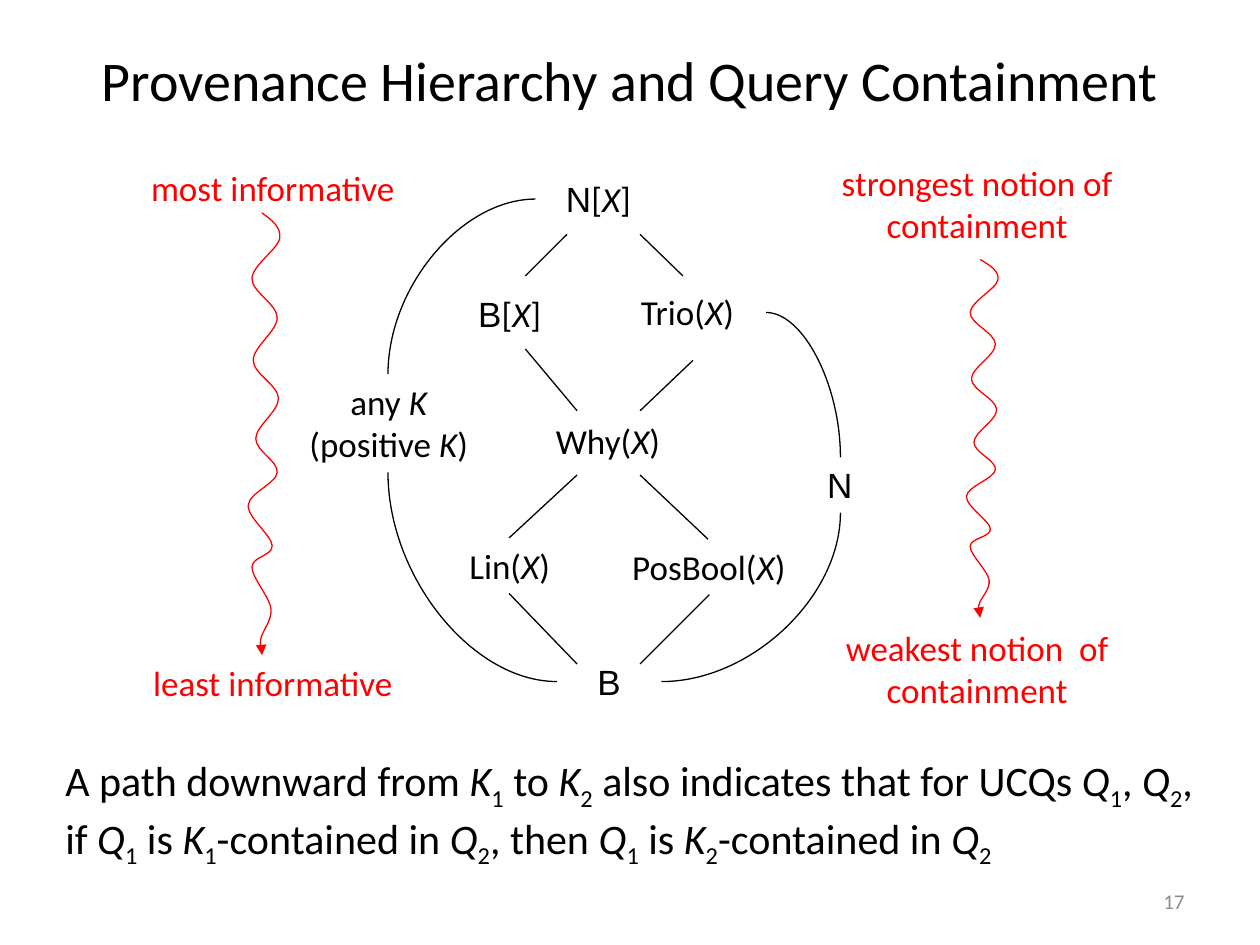
"""Build a slide on the provenance hierarchy and query containment."""
from dataclasses import dataclass

from lxml.etree import SubElement
from pptx import Presentation
from pptx.dml.color import RGBColor
from pptx.enum.shapes import MSO_CONNECTOR as Connector
from pptx.enum.text import MSO_ANCHOR as Anchor, MSO_AUTO_SIZE as AutoSize, PP_ALIGN as Align
from pptx.oxml.ns import qn
from pptx.util import Inches, Pt

COLORS = {"text": "000000", "accent": "FF0000", "number": "8C8C8C"}
FONT, SYMBOL_FONT = "Calibri", "Arial"
ITALIC, SUBSCRIPT, SYMBOL = "/", "_", "~"

Point = tuple[float, float]


@dataclass
class Label:
    """Text box whose runs are split by | and styled by their first character."""
    left: float
    top: float
    width: float
    height: float
    lines: tuple[str, ...]
    color: str = "text"
    size: int = 20
    align: Align = Align.CENTER
    anchor: Anchor = Anchor.TOP


@dataclass
class Link:
    """Straight edge, or quarter arc leaving its start horizontally."""
    start: Point
    end: Point
    curved: bool = False


@dataclass
class Wave:
    """Wavy downward arrow."""
    left: float
    top: float
    stretch: float


LABELS = [
    Label(4.25, 1.36, 1, 0.44, ("~N|[|/X|]",)),
    Label(3.17, 2.27, 1.75, 0.44, ("~B|[|/X|]",)),
    Label(4.83, 2.26, 1.25, 0.44, ("Trio(|/X|)",)),
    Label(3.95, 3.28, 1.75, 0.44, ("Why(|/X|)",)),
    Label(3.17, 4.27, 1.75, 0.44, ("Lin(|/X|)",)),
    Label(4.75, 4.28, 1.75, 0.44, ("PosBool(|/X|)",)),
    Label(4.42, 5.19, 0.83, 0.44, ("~B",)),
    Label(6.25, 3.63, 0.83, 0.44, ("~N",)),
    Label(2.17, 2.97, 1.83, 0.77, ("any |/K", "(positive |/K|)")),
    Label(0.58, 1.27, 3.17, 0.44, ("most informative",), "accent"),
    Label(0.58, 5.2, 3.17, 0.44, ("least informative",), "accent"),
    Label(6.17, 1.23, 3.17, 0.77, ("strongest notion of containment",), "accent"),
    Label(6.17, 4.92, 3.17, 0.77, ("weakest notion  of containment",), "accent"),
    Label(0.42, 5.94, 9.33, 0.91, (
        "A path downward from |/K|_1| to |/K|_2| also indicates that for UCQs "
        "|/Q|_1|, |/Q|_2|, if |/Q|_1| is |/K|_1|-contained in |/Q|_2"
        "|, then |/Q|_1| is |/K|_2|-contained in |/Q|_2",), size=24, align=Align.LEFT),
    Label(7.17, 6.95, 2.33, 0.4, ("17",), "number", 12, Align.RIGHT, Anchor.MIDDLE),
]
LINKS = [
    Link((4.5, 1.86), (4.17, 2.19)),
    Link((5.08, 1.86), (5.42, 2.19)),
    Link((4.17, 2.77), (4.58, 3.26)),
    Link((5.5, 2.86), (5.08, 3.26)),
    Link((4.58, 3.77), (4.04, 4.27)),
    Link((5.08, 3.77), (5.62, 4.28)),
    Link((4.04, 4.71), (4.58, 5.27)),
    Link((5.63, 4.72), (5.08, 5.27)),
    Link((6.08, 2.48), (6.67, 3.63), True),
    Link((5.25, 5.41), (6.67, 4.07), True),
    Link((4.25, 1.58), (3.08, 2.97), True),
    Link((4.42, 5.41), (3.08, 3.75), True),
]
WAVES = [Wave(2.08, 1.69, 1), Wave(7.78, 2.06, 0.81)]
WAVE_KNOTS = [
    (0, 0), (0.14, 0.2), (-0.08, 0.52), (0.12, 0.83), (-0.07, 1.17),
    (0.13, 1.47), (-0.05, 1.79), (0.12, 2.06), (-0.11, 2.32), (0.08, 2.64),
    (-0.08, 2.81), (0.07, 3.14), (-0.01, 3.38), (0.01, 3.51), (0, 3.51),
]


def color(name: str) -> RGBColor:
    """Look up a named colour."""
    return RGBColor.from_string(COLORS[name])


def format_line(shape, name: str) -> None:
    """Give a shape a thin line without a shadow."""
    shape.line.color.rgb = color(name)
    shape.line.width = Pt(0.75)
    properties = shape._element.spPr
    if properties.find(qn("a:effectLst")) is None:
        SubElement(properties, qn("a:effectLst"))


def add_runs(paragraph, line: str) -> None:
    """Add the styled runs of one line."""
    for part in line.split("|"):
        style = part[0] if part[0] in (ITALIC, SUBSCRIPT, SYMBOL) else ""
        run = paragraph.add_run()
        run.text = part[len(style):]
        if style == ITALIC:
            run.font.italic = True
        elif style == SUBSCRIPT:
            run.font._element.set("baseline", "-25000")
        elif style == SYMBOL:
            run.font.name = SYMBOL_FONT


def add_label(slide, label: Label) -> None:
    """Draw one text box."""
    shape = slide.shapes.add_textbox(
        *map(Inches, (label.left, label.top, label.width, label.height)))
    frame = shape.text_frame
    frame.word_wrap = True
    frame.auto_size = AutoSize.SHAPE_TO_FIT_TEXT
    frame.vertical_anchor = label.anchor
    for index, line in enumerate(label.lines):
        paragraph = frame.add_paragraph() if index else frame.paragraphs[0]
        paragraph.alignment = label.align
        paragraph.font.name = FONT
        paragraph.font.size = Pt(label.size)
        paragraph.font.color.rgb = color(label.color)
        add_runs(paragraph, line)


def add_link(slide, link: Link) -> None:
    """Draw one connector."""
    kind = Connector.CURVE if link.curved else Connector.STRAIGHT
    connector = slide.shapes.add_connector(kind, *map(Inches, link.start + link.end))
    if link.curved:
        connector._element.spPr.find(qn("a:prstGeom")).set("prst", "curvedConnector2")
    format_line(connector, "text")


def curve_controls(knots: list[Point]) -> list[tuple[Point, Point]]:
    """Return both control points of each segment of a smooth curve."""
    pairs = []
    last = len(knots) - 2
    for index in range(last + 1):
        start, end = knots[index:index + 2]
        if index > 0:
            before = knots[index - 1]
            first = tuple(s + (e - b) / 6 for s, e, b in zip(start, end, before))
        if index < last:
            after = knots[index + 2]
            second = tuple(e - (a - s) / 6 for s, e, a in zip(start, end, after))
        else:
            second = tuple((e + f) / 2 for e, f in zip(end, first))
        if index == 0:
            first = tuple((s + c) / 2 for s, c in zip(start, second))
        pairs.append((first, second))
    return pairs


def add_wave(slide, wave: Wave) -> None:
    """Draw one wavy arrow as a smooth freeform."""
    knots = [(Inches(wave.left + x), Inches(wave.top + y * wave.stretch))
             for x, y in WAVE_KNOTS]
    builder = slide.shapes.build_freeform(*knots[0], scale=1.0)
    builder.add_line_segments(knots[1:], close=False)
    shape = builder.convert_to_shape()
    segments = list(shape._element.iter(qn("a:lnTo")))
    for segment, controls in zip(segments, curve_controls(knots)):
        segment.tag = qn("a:cubicBezTo")
        for position, (x, y) in enumerate(controls):
            point = SubElement(segment, qn("a:pt"), x=str(round(x - shape.left)),
                               y=str(round(y - shape.top)))
            segment.insert(position, point)
    shape.fill.background()
    shape.shadow.inherit = False
    format_line(shape, "accent")
    SubElement(shape.line._get_or_add_ln(), qn("a:tailEnd"), type="triangle")


def add_title(slide, text: str) -> None:
    """Place and format the title."""
    title = slide.shapes.title
    title.left, title.top, title.width, title.height = map(Inches, (0, 0, 10, 1.25))
    title.text_frame.text = text
    title.text_frame.vertical_anchor = Anchor.MIDDLE
    paragraph = title.text_frame.paragraphs[0]
    paragraph.alignment = Align.CENTER
    paragraph.font.name = FONT
    paragraph.font.size = Pt(32)
    paragraph.font.color.rgb = color("text")


def main() -> None:
    """Build and save the slide."""
    presentation = Presentation()
    presentation.slide_width, presentation.slide_height = Inches(10), Inches(7.5)
    slide = presentation.slides.add_slide(presentation.slide_layouts[5])
    add_title(slide, "Provenance Hierarchy and Query Containment")
    for draw, items in ((add_label, LABELS), (add_link, LINKS), (add_wave, WAVES)):
        for item in items:
            draw(slide, item)
    presentation.save("out.pptx")


if __name__ == "__main__":
    main()
